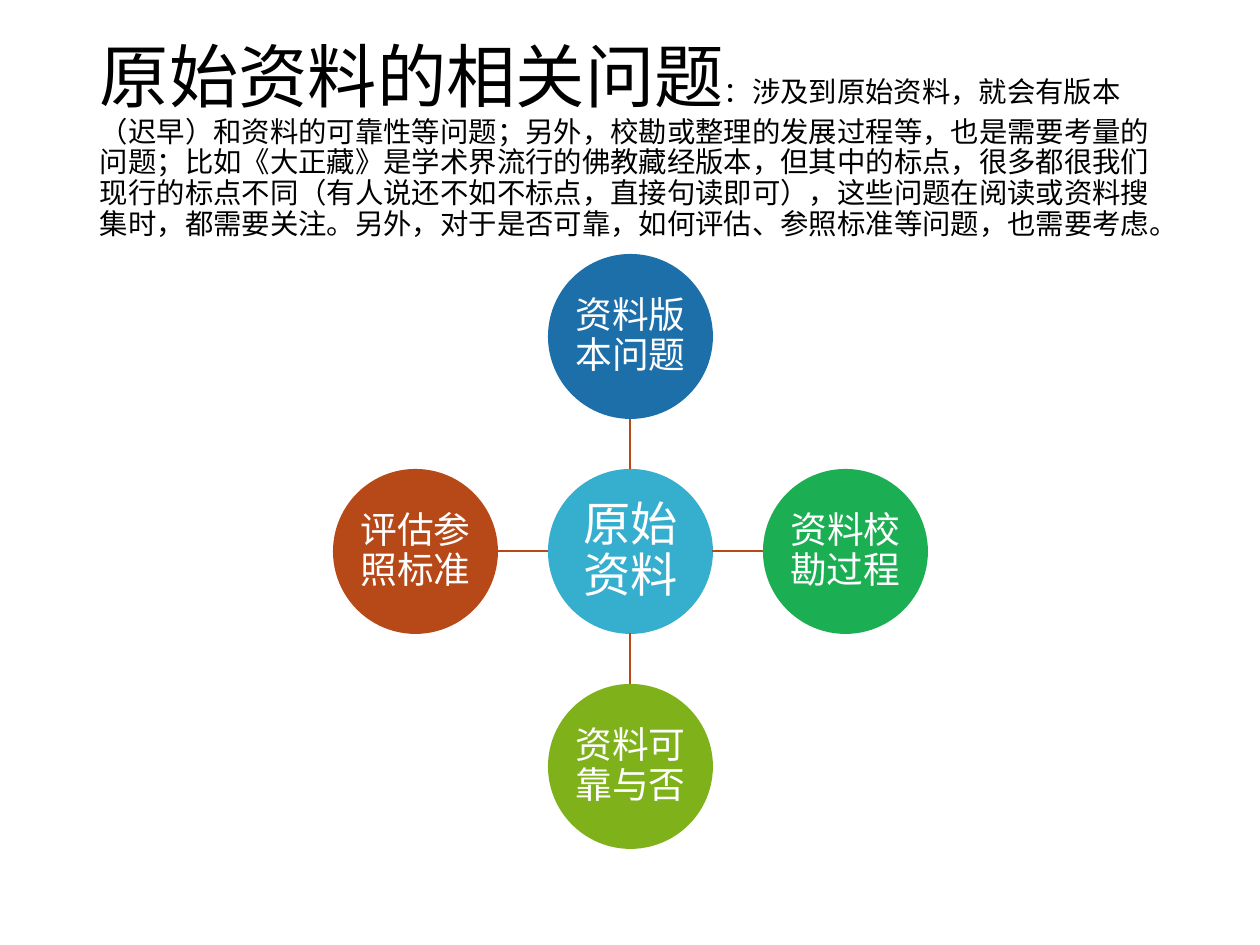
from lxml import etree
from pptx import Presentation
from pptx import util as u
from pptx.dml.color import RGBColor
from pptx.enum import shapes, text
from pptx.oxml.ns import qn

PX = 914400 // 126
FONT = "Times New Roman"
C = {"black": "000000", "white": "FFFFFF", "hub": "36AFCE", "top": "1D6FA9",
     "right": "1CAE53", "bottom": "7FB21A", "left": "B74919", "line": "B74919"}

prs = Presentation()
prs.slide_width, prs.slide_height = 1260 * PX, 945 * PX
s = prs.slides.add_slide(prs.slide_layouts[6])


def write(sp, runs, color, align, inset):
    tf = sp.text_frame
    fmt = {"word_wrap": True, "vertical_anchor": text.MSO_ANCHOR.MIDDLE}
    for side, gap in zip(("left", "top", "right", "bottom"), inset):
        fmt[f"margin_{side}"] = gap * PX
    for name, value in fmt.items():
        setattr(tf, name, value)
    p = tf.paragraphs[0]
    p.alignment, p.line_spacing = align, 0.9
    for words, size in runs:
        r = p.add_run()
        r.text = words
        for name, value in {"name": FONT, "size": u.Pt(size)}.items():
            setattr(r.font, name, value)
        r.font.color.rgb = RGBColor.from_string(C[color])


title = s.shapes.add_textbox(87 * PX, 50 * PX, 1086 * PX, 183 * PX)
body = ("：涉及到原始资料，就会有版本（迟早）和资料的可靠性等问题；另外，校勘或整理的发展过程等，"
        "也是需要考量的问题；比如《大正藏》是学术界流行的佛教藏经版本，但其中的标点，"
        "很多都很我们现行的标点不同（有人说还不如不标点，直接句读即可），"
        "这些问题在阅读或资料搜集时，都需要关注。另外，对于是否可靠，如何评估、"
        "参照标准等问题，也需要考虑。")
write(title, [("原始资料的相关问题", 39.6), (body, 16.2)], "black",
      text.PP_ALIGN.LEFT, (13, 6, 13, 6))

HUB_X, HUB_Y, SIZE, STEP = 548, 469, 165, 215
MID_X, MID_Y, RADIUS = 630, 551, 82
nodes = [("原始资料", "hub", 0, 0, 27),
         ("资料版本问题", "top", 0, -1, 21),
         ("资料校勘过程", "right", 1, 0, 21),
         ("资料可靠与否", "bottom", 0, 1, 21),
         ("评估参照标准", "left", -1, 0, 21)]

for label, color, dx, dy, size in nodes:
    if dx or dy:
        near, far = RADIUS, STEP - RADIUS
        ln = s.shapes.add_connector(
            shapes.MSO_CONNECTOR.STRAIGHT,
            (MID_X + dx * near) * PX, (MID_Y + dy * near) * PX,
            (MID_X + dx * far) * PX, (MID_Y + dy * far) * PX)
        ln.line.color.rgb = RGBColor.from_string(C["line"])
        ln.line.width = u.Pt(1)
        etree.SubElement(ln._element.spPr, qn("a:effectLst"))
    sp = s.shapes.add_shape(
        shapes.MSO_SHAPE.OVAL, (HUB_X + dx * STEP) * PX,
        (HUB_Y + dy * STEP) * PX, SIZE * PX, SIZE * PX)
    sp.shadow.inherit = False
    sp.fill.solid()
    sp.fill.fore_color.rgb = RGBColor.from_string(C[color])
    sp.line.fill.background()
    write(sp, [(label, size)], "white", text.PP_ALIGN.CENTER, (2, 2, 2, 2))

prs.save("out.pptx")
